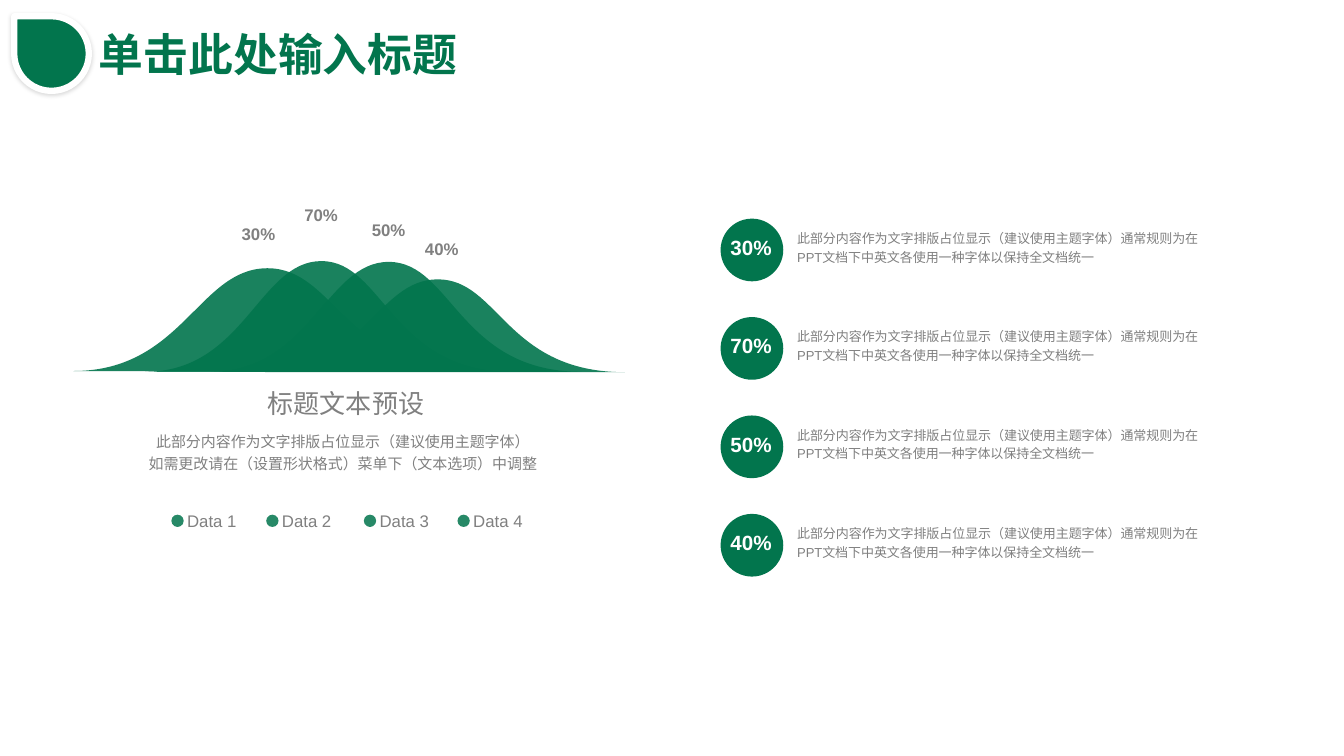
from lxml import etree
from pptx import Presentation
from pptx import util as u
from pptx.dml.color import RGBColor
from pptx.enum import shapes, text
from pptx.oxml import parse_xml
from pptx.oxml.ns import nsdecls, qn

GREEN, GREY, WHITE = "02754D", "808080", "FFFFFF"
TITLE = "单击此处输入标题"
HEAD = "标题文本预设"
BODY = "此部分内容作为文字排版占位显示（建议使用主题字体）\n如需更改请在（设置形状格式）菜单下（文本选项）中调整"
NOTE = "此部分内容作为文字排版占位显示（建议使用主题字体）通常规则为在PPT文档下中英文各使用一种字体以保持全文档统一"
HILLS = [
    ("30%", (5.84, 5.51), (1.85, 6.76, 10.19, 2.59)),
    ("70%", (7.42, 5.03), (3.66, 6.58, 9.25, 2.79)),
    ("50%", (9.12, 5.41), (5.31, 6.6, 9.35, 2.77)),
    ("40%", (10.46, 5.89), (6.68, 7.04, 9.07, 2.34)),
]
KEYS = [("Data 1", 4.32), ("Data 2", 6.71), ("Data 3", 9.17), ("Data 4", 11.53)]
BELL = [(0.27, 1), (0.31, 0), (0.48, 0), (0.65, 0), (0.67, 1), (1, 1)]
ROW_X, ROW_Y, ROW_GAP, DISC = 18.16, 5.51, 2.48, 1.58
DOT, DOT_Y = 0.31, 12.97

LEFT, MID = text.PP_ALIGN.LEFT, text.PP_ALIGN.CENTER
TIGHT = dict(margin_left=0, margin_right=0, margin_top=0, margin_bottom=0,
             vertical_anchor=text.MSO_ANCHOR.MIDDLE)
SLIM = dict(margin_left=0, margin_right=0)
INSET = dict(margin_right=u.Cm(0.6))
GROW = dict(auto_size=text.MSO_AUTO_SIZE.SHAPE_TO_FIT_TEXT)

deck = Presentation()
deck.slide_width, deck.slide_height = u.Cm(33.87), u.Cm(19.05)
slide = deck.slides.add_slide(deck.slide_layouts[6])


def color(code):
    return RGBColor.from_string(code)


def apply(item, values):
    for name, value in values.items():
        setattr(item, name, value)


def write(words, box, size, code, bold=False, align=LEFT, wrap=False, space=None, frame=None):
    area = slide.shapes.add_textbox(*map(u.Cm, box)).text_frame
    apply(area, {"word_wrap": wrap, **(frame or {})})
    para = area.paragraphs[0]
    para.text = words.replace("\n", "\v")
    apply(para, dict(alignment=align, line_spacing=space))
    for run in para.runs:
        apply(run.font, dict(name="Arial", size=u.Pt(size), bold=bold))
        run.font.color.rgb = color(code)


def paint(shape, alpha=100):
    shape.shadow.inherit = False
    shape.fill.solid()
    shape.fill.fore_color.rgb = color(GREEN)
    shape.line.fill.background()
    if alpha < 100:
        tint = shape.fill._xPr.find(".//" + qn("a:srgbClr"))
        etree.SubElement(tint, qn("a:alpha")).set("val", str(alpha * 1000))
    return shape


def disc(left, top, side, alpha=100):
    box = map(u.Cm, (left, top, side, side))
    return paint(slide.shapes.add_shape(shapes.MSO_SHAPE.OVAL, *box), alpha)


def hill(left, top, wide, high):
    pen = slide.shapes.build_freeform(u.Cm(left), u.Cm(top + high))
    pen.add_line_segments(
        [(u.Cm(left + x * wide), u.Cm(top + y * high)) for x, y in BELL], close=True)
    shape = paint(pen.convert_to_shape(), 90)
    steps = list(shape._element.iter(qn("a:lnTo")))
    for start in (0, 3):
        curve = etree.Element(qn("a:cubicBezTo"))
        steps[start].addprevious(curve)
        for step in steps[start:start + 3]:
            curve.append(step[0])
            step.getparent().remove(step)


def badge(left, top, side):
    box = map(u.Cm, (left, top, side, side))
    drop = paint(slide.shapes.add_shape(shapes.MSO_SHAPE.TEAR, *box))
    drop._element.spPr.find(qn("a:xfrm")).set("flipH", "1")
    drop.line.color.rgb = color(WHITE)
    drop.line.width = u.Pt(4.5)
    drop._element.spPr.find(qn("a:effectLst")).append(parse_xml(
        f'<a:outerShdw {nsdecls("a")} blurRad="38100" dist="12700" dir="5400000" '
        'algn="t" rotWithShape="0"><a:srgbClr val="000000">'
        '<a:alpha val="15000"/></a:srgbClr></a:outerShdw>'))


for i, (rate, spot, bounds) in enumerate(HILLS):
    top = ROW_Y + i * ROW_GAP
    write(NOTE, (ROW_X + 1.68, top + 0.09, 11.38, 1.47), 9.3, GREY,
          wrap=True, space=1.2, frame=INSET)
    disc(ROW_X, top, DISC)
    write(rate, (ROW_X, top + 0.28, 1.65, 0.94), 14.7, WHITE, bold=True)
    hill(*bounds)
    write(rate, (*spot, 1.47, 0.84), 12, GREY, bold=True)

write(BODY, (1.14, 10.69, 15.01, 1.47), 10.7, GREY, align=MID, wrap=True, space=1.2)
write(HEAD, (6.52, 9.63, 4.4, 1.02), 18.6, GREY, align=MID, frame=SLIM)

for name, left in KEYS:
    disc(left, DOT_Y, DOT, 85)
    write(name, (left + 0.27, DOT_Y - 0.09, 1.5, 0.48), 12, GREY, align=MID, frame=TIGHT)

write(TITLE, (2.24, 0.55, 9.63, 1.63), 32, GREEN, bold=True, frame=GROW)
badge(0.36, 0.41, 1.88)

deck.save("out.pptx")
